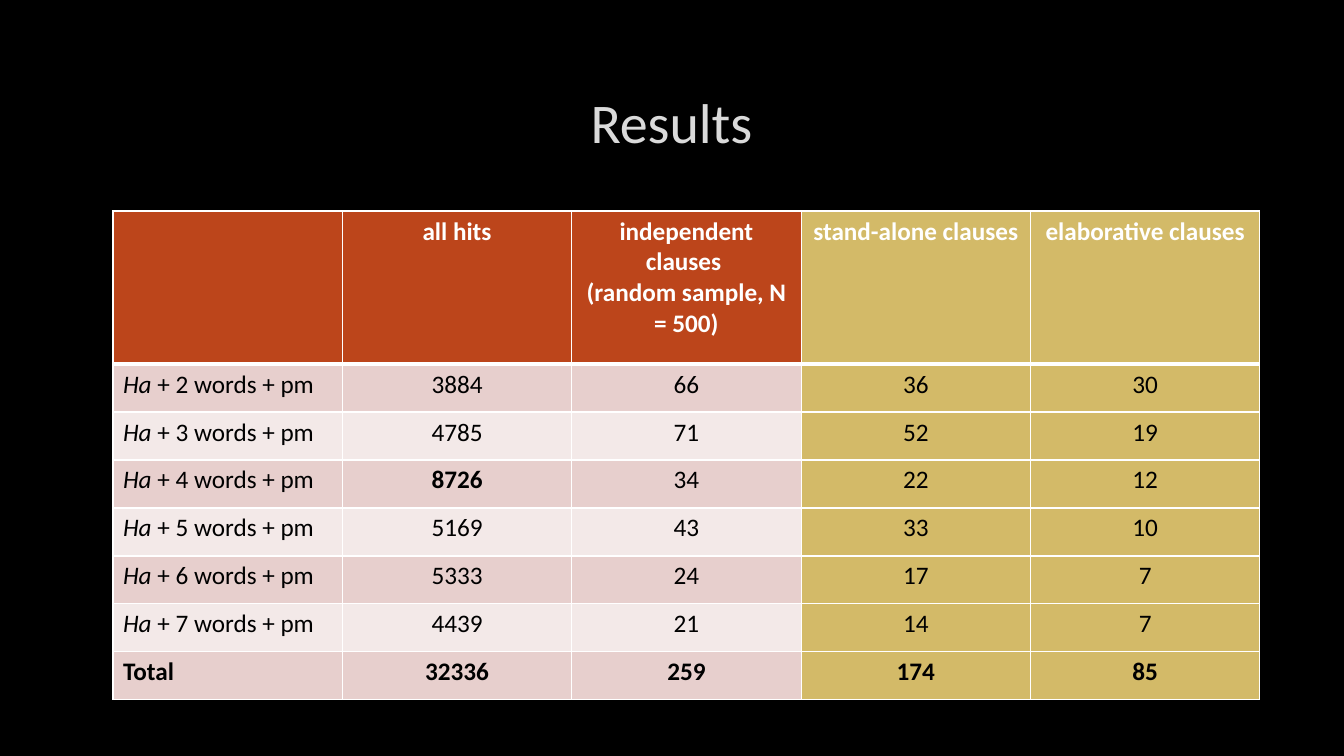
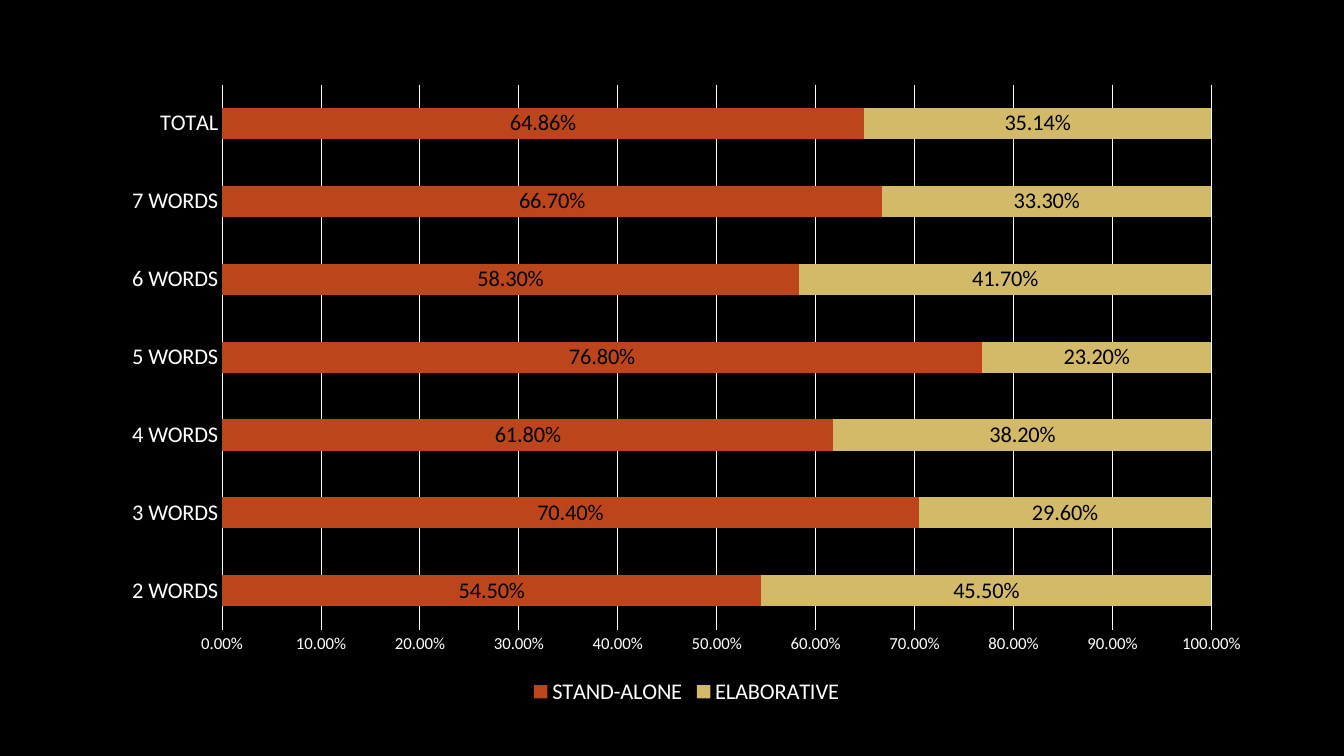
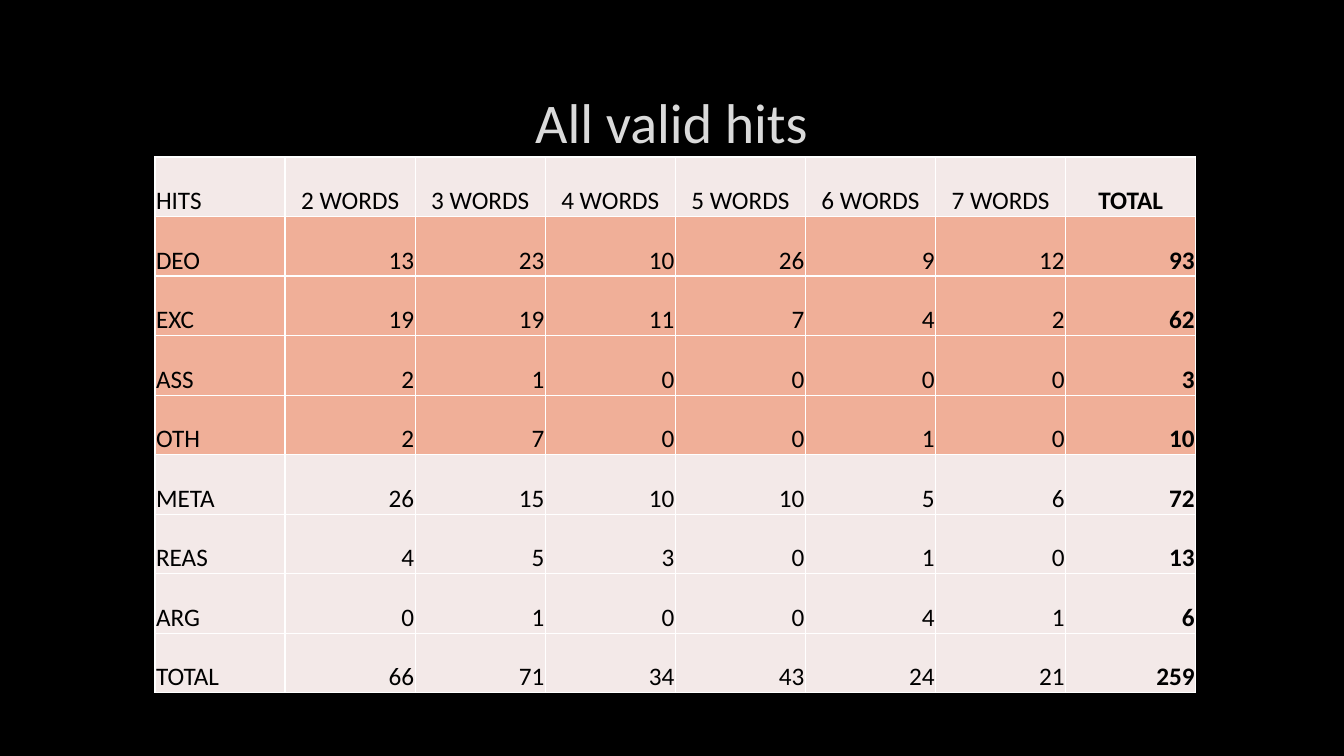
from dataclasses import dataclass

from lxml.etree import SubElement
from pptx import Presentation
from pptx.chart.data import CategoryChartData
from pptx.dml.color import RGBColor
from pptx.enum.chart import (XL_CHART_TYPE, XL_LABEL_POSITION,
                             XL_LEGEND_POSITION, XL_TICK_MARK)
from pptx.enum.text import MSO_ANCHOR, PP_ALIGN
from pptx.oxml import parse_xml
from pptx.oxml.ns import nsdecls, qn
from pptx.util import Emu, Pt

PAGE_WIDTH, PAGE_HEIGHT = 1344, 756
EMU_PER_PX = 12192000 / PAGE_WIDTH


def px(length):
    return Emu(round(length * EMU_PER_PX))


@dataclass(frozen=True)
class Theme:
    font: str = "Calibri"
    black: str = "000000"
    white: str = "FFFFFF"
    title: str = "DADADA"
    title_outline: str = "404040"
    rust: str = "BC451B"
    gold: str = "D3BA68"
    salmon: str = "F0AF98"
    band_dark: str = "E7CFCD"
    band_light: str = "F3E9E8"
    title_size: int = 40
    table_size: int = 18
    chart_size: int = 16
    scale_size: int = 12


@dataclass(frozen=True)
class Span:
    text: str
    italic: bool = False


@dataclass(frozen=True)
class Look:
    """How one table cell is drawn."""
    fill: str
    color: str = "000000"
    bold: bool = False
    align: PP_ALIGN = PP_ALIGN.LEFT


class Deck:
    def __init__(self, theme):
        self.theme = theme
        self.show = Presentation()
        self.show.slide_width = px(PAGE_WIDTH)
        self.show.slide_height = px(PAGE_HEIGHT)
        backdrop = self.show.slide_master.background.fill
        backdrop.solid()
        backdrop.fore_color.rgb = RGBColor.from_string(theme.black)
        self.page = None

    def new_page(self):
        self.page = self.show.slides.add_slide(self.show.slide_layouts[6])

    def style_font(self, font, size, color, bold=False, italic=False):
        font.name = self.theme.font
        font.size = Pt(size)
        font.bold = bold
        font.italic = italic
        font.color.rgb = RGBColor.from_string(color)

    def title(self, text):
        box = self.page.shapes.add_textbox(px(101), px(68), px(1141), px(107))
        frame = box.text_frame
        frame.word_wrap = True
        frame.vertical_anchor = MSO_ANCHOR.MIDDLE
        para = frame.paragraphs[0]
        para.alignment = PP_ALIGN.CENTER
        span = para.add_run()
        span.text = text
        self.style_font(span.font, self.theme.title_size, self.theme.title)
        # Faint outline around the letters
        outline = parse_xml(
            f'<a:ln {nsdecls("a")} w="{Pt(0.75)}"><a:solidFill>'
            f'<a:srgbClr val="{self.theme.title_outline}"><a:alpha val="10000"/>'
            '</a:srgbClr></a:solidFill></a:ln>')
        span.font._element.insert(0, outline)

    def borders(self, cell, top, bottom):
        properties = cell._tc.get_or_add_tcPr()
        for side, weight in (("L", 1), ("R", 1), ("T", top), ("B", bottom)):
            line = SubElement(properties, qn(f"a:ln{side}"), w=str(Pt(weight)))
            fill = SubElement(line, qn("a:solidFill"))
            SubElement(fill, qn("a:srgbClr"), val=self.theme.white)

    def cell_text(self, cell, content, look):
        """Write a string, one paragraph a line, or a tuple of spans."""
        if isinstance(content, tuple):
            lines = [content]
        else:
            lines = [(Span(line),) for line in str(content).split("\n")]
        frame = cell.text_frame
        for index, spans in enumerate(lines):
            para = frame.add_paragraph() if index else frame.paragraphs[0]
            para.alignment = look.align
            for part in spans:
                if part.text:
                    span = para.add_run()
                    span.text = part.text
                    self.style_font(span.font, self.theme.table_size,
                                    look.color, look.bold, part.italic)

    def table(self, rows, look_at, left, top, width, height,
              header_height=None, header_rule=1, tight=False):
        frame = self.page.shapes.add_table(
            len(rows), len(rows[0]), px(left), px(top), px(width), px(height))
        table = frame.table
        table.first_row = table.horz_banding = False
        for column in table.columns:
            column.width = px(width / len(rows[0]))
        header = header_height or height / len(rows)
        for index, row in enumerate(table.rows):
            row.height = px((height - header) / (len(rows) - 1) if index else header)
        for r, contents in enumerate(rows):
            for c, content in enumerate(contents):
                cell, look = table.cell(r, c), look_at(r, c)
                self.borders(cell, top=header_rule if r == 1 else 1,
                             bottom=header_rule if r == 0 else 1)
                cell.fill.solid()
                cell.fill.fore_color.rgb = RGBColor.from_string(look.fill)
                if tight:
                    cell.vertical_anchor = MSO_ANCHOR.BOTTOM
                    cell.margin_left = cell.margin_right = cell.margin_top = px(1)
                    cell.margin_bottom = 0
                self.cell_text(cell, content, look)

    def white_line(self, line):
        line.color.rgb = RGBColor.from_string(self.theme.white)
        line.width = Pt(0.75)

    def stacked_bars(self, categories, series, left, top, width, height):
        """Draw stacked bars; series holds (name, colour, values)."""
        theme = self.theme
        data = CategoryChartData(number_format="0.00%")
        data.categories = categories
        for name, _, values in series:
            data.add_series(name, values)
        chart = self.page.shapes.add_chart(
            XL_CHART_TYPE.BAR_STACKED, px(left), px(top), px(width), px(height),
            data).chart
        chart.has_title = False
        self.style_font(chart.font, theme.chart_size, theme.white)

        # Bars and their labels
        plot = chart.plots[0]
        plot.gap_width, plot.overlap = 150, 100
        plot.vary_by_categories = False
        for bars, (_, color, _) in zip(plot.series, series):
            bars.format.fill.solid()
            bars.format.fill.fore_color.rgb = RGBColor.from_string(color)
            labels = bars.data_labels
            labels.show_value = True
            labels.position = XL_LABEL_POSITION.CENTER
            labels.number_format = "0.00%"
            labels.number_format_is_linked = False
            self.style_font(labels.font, theme.chart_size, theme.black)

        # Axes
        for axis, size in ((chart.category_axis, theme.chart_size),
                           (chart.value_axis, theme.scale_size)):
            axis.major_tick_mark = axis.minor_tick_mark = XL_TICK_MARK.NONE
            self.style_font(axis.tick_labels.font, size, theme.white)
        self.white_line(chart.category_axis.format.line)
        scale = chart.value_axis
        scale.minimum_scale, scale.maximum_scale, scale.major_unit = 0, 1, 0.1
        scale.tick_labels.number_format = "0.00%"
        scale.tick_labels.number_format_is_linked = False
        scale.format.line.fill.background()
        self.white_line(scale.major_gridlines.format.line)

        # Legend
        chart.has_legend = True
        chart.legend.position = XL_LEGEND_POSITION.BOTTOM
        chart.legend.include_in_layout = False
        self.style_font(chart.legend.font, theme.chart_size, theme.white)


def results_page(deck):
    theme = deck.theme
    counts = [(3884, 66, 36, 30), (4785, 71, 52, 19), (8726, 34, 22, 12),
              (5169, 43, 33, 10), (5333, 24, 17, 7), (4439, 21, 14, 7)]
    rows = [("", "all hits", "independent clauses \n(random sample, N = 500)",
             "stand-alone clauses", "elaborative clauses")]
    for words, numbers in enumerate(counts, start=2):
        label = (Span("Ha", italic=True), Span(f" + {words} words + pm"))
        rows.append((label, *numbers))
    rows.append(("Total", 32336, 259, 174, 85))
    total_row, largest = len(rows) - 1, (3, 1)

    def look_at(row, column):
        if column >= 3:
            fill = theme.gold
        elif row == 0:
            fill = theme.rust
        else:
            fill = theme.band_dark if row % 2 else theme.band_light
        return Look(fill, theme.black if row else theme.white,
                    bold=row in (0, total_row) or (row, column) == largest,
                    align=PP_ALIGN.CENTER if column else PP_ALIGN.LEFT)

    deck.new_page()
    deck.title("Results")
    deck.table(rows, look_at, 113, 211, 1147, 489,
               header_height=153, header_rule=3)


def shares_page(deck):
    theme = deck.theme
    categories = [f"{words} WORDS" for words in range(2, 8)] + ["TOTAL"]
    series = [
        ("STAND-ALONE", theme.rust,
         (0.545, 0.704, 0.618, 0.768, 0.583, 0.667, 0.6486)),
        ("ELABORATIVE", theme.gold,
         (0.455, 0.296, 0.382, 0.232, 0.417, 0.333, 0.3514)),
    ]
    deck.new_page()
    deck.stacked_bars(categories, series, 109, 72, 1155, 638)


def valid_hits_page(deck):
    theme = deck.theme
    rows = [
        ("HITS", *(f"{words} WORDS" for words in range(2, 8)), "TOTAL"),
        ("DEO", 13, 23, 10, 26, 9, 12, 93),
        ("EXC", 19, 19, 11, 7, 4, 2, 62),
        ("ASS", 2, 1, 0, 0, 0, 0, 3),
        ("OTH", 2, 7, 0, 0, 1, 0, 10),
        ("META", 26, 15, 10, 10, 5, 6, 72),
        ("REAS", 4, 5, 3, 0, 1, 0, 13),
        ("ARG", 0, 1, 0, 0, 4, 1, 6),
        ("TOTAL", 66, 71, 34, 43, 24, 21, 259),
    ]
    total_column = len(rows[0]) - 1

    def look_at(row, column):
        if column == 0:
            align = PP_ALIGN.LEFT
        else:
            align = PP_ALIGN.RIGHT if row else PP_ALIGN.CENTER
        return Look(theme.salmon if 1 <= row <= 4 else theme.band_light,
                    theme.black, bold=column == total_column, align=align)

    deck.new_page()
    deck.title("All valid hits")
    deck.table(rows, look_at, 155, 157, 1041, 536, tight=True)


def main():
    deck = Deck(Theme())
    results_page(deck)
    shares_page(deck)
    valid_hits_page(deck)
    deck.show.save("out.pptx")


if __name__ == "__main__":
    main()
